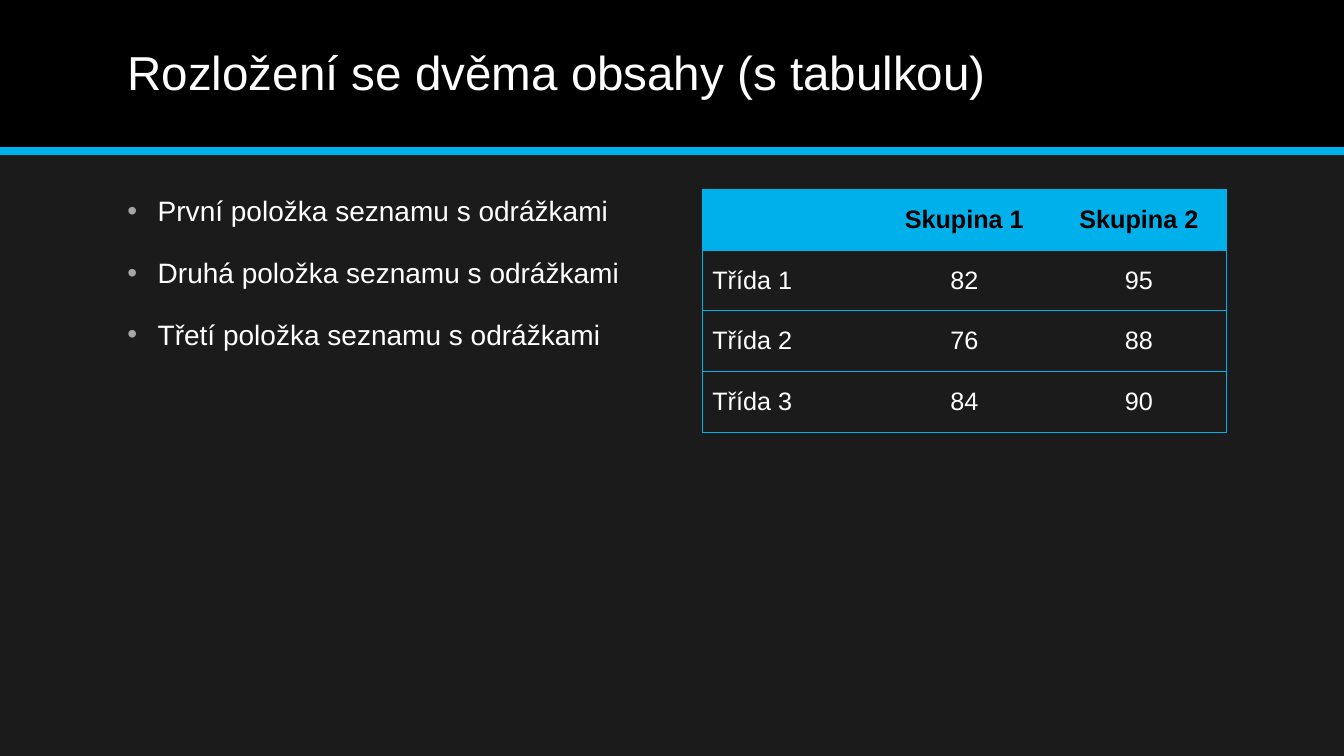
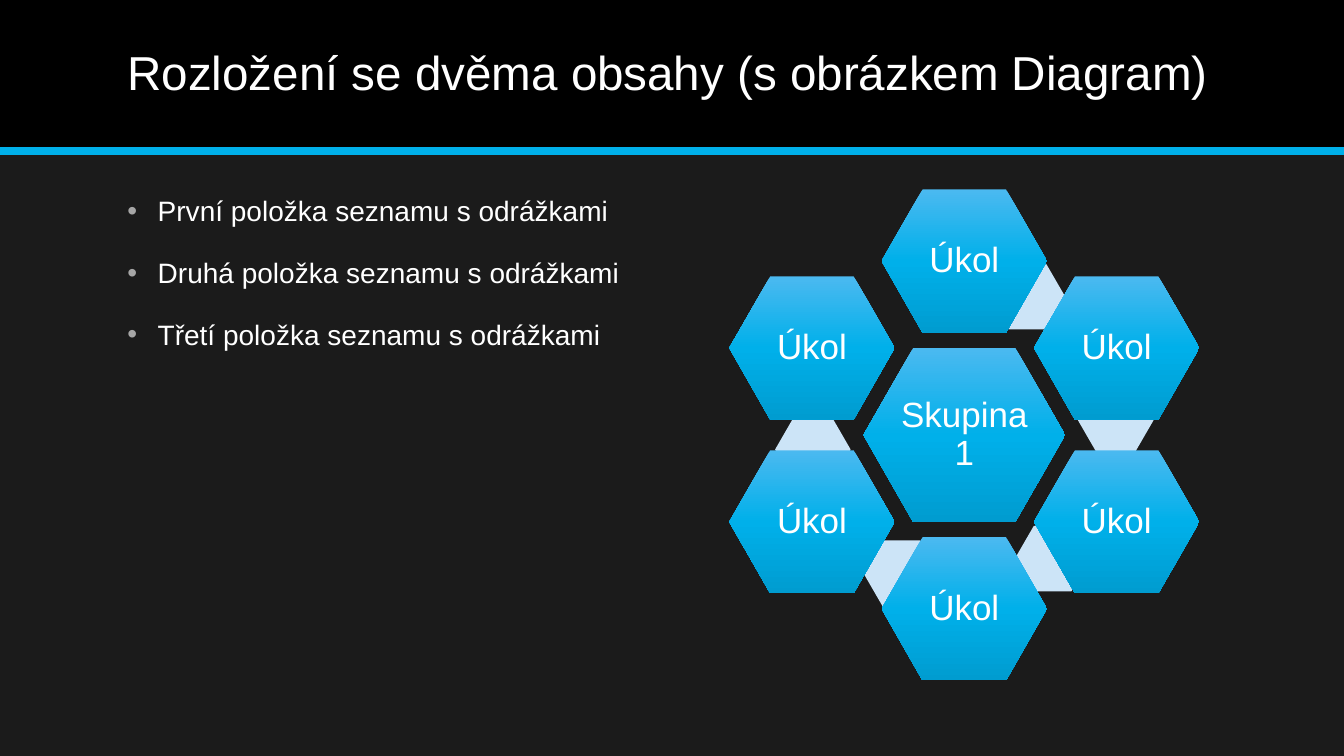
from copy import deepcopy
from dataclasses import dataclass
from math import cos, radians, sin

from lxml.etree import SubElement
from pptx import Presentation
from pptx.dml.color import RGBColor
from pptx.enum.shapes import MSO_CONNECTOR, MSO_SHAPE
from pptx.enum.text import MSO_ANCHOR, PP_ALIGN
from pptx.oxml.ns import qn
from pptx.util import Emu, Inches, Pt

WIDTH, HEIGHT = Inches(13.333), Inches(7.5)
FONT = "Arial"
BLACK, WHITE, DARK, GREY = "000000", "FFFFFF", "1B1B1B", "A6A6A6"
ACCENT, LINK_BLUE = "00B0EA", "CCE4F7"
TASK_GRADIENT = ((0, "4BB9F0"), (0.5, ACCENT), (1, "009CD0"))


@dataclass(frozen=True)
class Area:
    """A rectangle in percent of the slide's width and height."""

    left: float
    top: float
    width: float
    height: float

    def emu(self) -> tuple[Emu, Emu, Emu, Emu]:
        """Return left, top, width and height as lengths."""
        return across(self.left), down(self.top), across(self.width), down(self.height)


@dataclass(frozen=True)
class Ring:
    """Hexagons of one size set every 60 degrees around the hub."""

    width: float
    height: float
    radius_x: float = 0
    radius_y: float = 0
    start: float = 0
    adjust: float = 0.286

    def area(self, step: int) -> Area:
        """Return the place of one hexagon, clockwise from the start angle."""
        angle = radians(self.start + 60 * step)
        x = HUB_X + self.radius_x * sin(angle)
        y = HUB_Y - self.radius_y * cos(angle)
        return Area(x - self.width / 2, y - self.height / 2, self.width, self.height)


BAND = Area(0, 0, 100, 20)
TITLE = Area(8.75, 1.87, 82.5, 16)
LIST = Area(8.75, 25, 39, 65)
GRADES = Area(52.25, 25, 39, 32.2)
HUB_X, HUB_Y = 71.75, 57.53
HUB = Ring(15, 23.07)
TASKS = Ring(12.3, 18.93, 13.09, 23)
LINKS = Ring(5.62, 8.67, 11.32, 20.1, start=24.5, adjust=0.289)

ITEMS = (
    "První položka seznamu s odrážkami",
    "Druhá položka seznamu s odrážkami",
    "Třetí položka seznamu s odrážkami",
)
GRADE_ROWS = (
    ("", "Skupina 1", "Skupina 2"),
    ("Třída 1", "82", "95"),
    ("Třída 2", "76", "88"),
    ("Třída 3", "84", "90"),
)


def across(percent: float) -> Emu:
    """Turn a share of the slide's width into a length."""
    return Emu(round(WIDTH * percent / 100))


def down(percent: float) -> Emu:
    """Turn a share of the slide's height into a length."""
    return Emu(round(HEIGHT * percent / 100))


def colour(value: str) -> RGBColor:
    """Turn a hex string into a colour."""
    return RGBColor.from_string(value)


def add_bullet(paragraph) -> None:
    """Give a paragraph a grey bullet and a hanging indent."""
    properties = paragraph._p.get_or_add_pPr()
    properties.set("marL", str(Inches(0.3)))
    properties.set("indent", str(-Inches(0.3)))
    tint = SubElement(properties, qn("a:buClr"))
    SubElement(tint, qn("a:srgbClr")).set("val", GREY)
    SubElement(properties, qn("a:buFont")).set("typeface", FONT)
    SubElement(properties, qn("a:buChar")).set("char", "•")


def write(frame, *lines: str, size: float, ink: str = WHITE, bold: bool = False,
          align=PP_ALIGN.LEFT, anchor=MSO_ANCHOR.MIDDLE, spacing: float = 1,
          before: float = 0, bullets: bool = False) -> None:
    """Write lines as paragraphs with one format."""
    frame.word_wrap = True
    frame.vertical_anchor = anchor
    for index, line in enumerate(lines):
        paragraph = frame.add_paragraph() if index else frame.paragraphs[0]
        if bullets:
            add_bullet(paragraph)
        paragraph.alignment = align
        paragraph.line_spacing = spacing
        paragraph.space_before = Pt(before if index else 0)
        font = paragraph.font
        run = paragraph.add_run()
        run.text = line
        for font in (paragraph.font, run.font):
            font.name, font.size, font.bold = FONT, Pt(size), bold
            font.color.rgb = colour(ink)


def add_filled(slide, kind, area: Area, fill: str):
    """Add a plain shape with a solid fill and no line."""
    shape = slide.shapes.add_shape(kind, *area.emu())
    shape.shadow.inherit = False
    shape.fill.solid()
    shape.fill.fore_color.rgb = colour(fill)
    shape.line.fill.background()
    return shape


def add_hexagon(slide, ring: Ring, step: int, fill: str = ACCENT):
    """Add one hexagon of a ring."""
    hexagon = add_filled(slide, MSO_SHAPE.HEXAGON, ring.area(step), fill)
    hexagon.adjustments[0] = ring.adjust
    return hexagon


def shade(shape) -> None:
    """Fill a shape with the gradient of the tasks, from top to bottom."""
    shape.fill.gradient()
    shape.fill.gradient_angle = 270
    stops = shape.element.spPr.find(qn("a:gradFill")).find(qn("a:gsLst"))
    stops.append(deepcopy(stops[-1]))
    for stop, (position, tint) in zip(shape.fill.gradient_stops, TASK_GRADIENT):
        stop.position = position
        stop.color.rgb = colour(tint)


def add_task(slide, ring: Ring, step: int, label: str) -> None:
    """Add a shaded hexagon with its label."""
    hexagon = add_hexagon(slide, ring, step)
    shade(hexagon)
    frame = hexagon.text_frame
    frame.margin_left = frame.margin_right = 0
    frame.margin_top = frame.margin_bottom = Inches(0.03)
    write(frame, label, size=25, align=PP_ALIGN.CENTER, spacing=0.9)


def set_borders(cell, edges: str) -> None:
    """Draw the named edges of a cell and clear the others."""
    properties = cell._tc.get_or_add_tcPr()
    for index, edge in enumerate("LRTB"):
        border = properties.makeelement(qn(f"a:ln{edge}"), {"w": str(Pt(0.5))})
        properties.insert(index, border)
        if edge in edges:
            solid = SubElement(border, qn("a:solidFill"))
            SubElement(solid, qn("a:srgbClr")).set("val", ACCENT)
        else:
            SubElement(border, qn("a:noFill"))


def add_grades(slide) -> None:
    """Add the table of classes and groups."""
    count = len(GRADE_ROWS[0])
    table = slide.shapes.add_table(len(GRADE_ROWS), count, *GRADES.emu()).table
    table.horz_banding = False
    for column in table.columns:
        column.width = across(GRADES.width / count)
    for row, values in enumerate(GRADE_ROWS):
        table.rows[row].height = down(GRADES.height / len(GRADE_ROWS))
        for column, value in enumerate(values):
            cell = table.cell(row, column)
            header = row == 0
            if header:
                cell.fill.solid()
                cell.fill.fore_color.rgb = colour(ACCENT)
            else:
                cell.fill.background()
            set_borders(cell, "TB" + "L" * (column == 0) + "R" * (column == count - 1))
            cell.vertical_anchor = MSO_ANCHOR.MIDDLE
            if value:
                write(cell.text_frame, value, size=18, bold=header,
                      ink=BLACK if header else WHITE,
                      align=PP_ALIGN.CENTER if column else PP_ALIGN.LEFT)


def add_cycle(slide) -> None:
    """Add the hub, the links and the ring of tasks."""
    add_task(slide, HUB, 0, "Skupina 1")
    for step in range(5):
        add_hexagon(slide, LINKS, step, LINK_BLUE)
    for step in range(6):
        add_task(slide, TASKS, step, "Úkol")


def add_content_slide(deck, title: str):
    """Add a slide with the band, the title and the bulleted list."""
    slide = deck.slides.add_slide(deck.slide_layouts[6])
    slide.background.fill.solid()
    slide.background.fill.fore_color.rgb = colour(DARK)
    add_filled(slide, MSO_SHAPE.RECTANGLE, BAND, BLACK)
    edge = down(BAND.height)
    rule = slide.shapes.add_connector(MSO_CONNECTOR.STRAIGHT, 0, edge, WIDTH, edge)
    rule.line.color.rgb = colour(ACCENT)
    rule.line.width = Pt(6)
    SubElement(rule.element.spPr, qn("a:effectLst"))
    heading = slide.shapes.add_textbox(*TITLE.emu())
    write(heading.text_frame, title, size=34, spacing=0.9)
    points = slide.shapes.add_textbox(*LIST.emu())
    write(points.text_frame, *ITEMS, size=20, anchor=MSO_ANCHOR.TOP,
          before=20, bullets=True)
    return slide


def main() -> None:
    """Build and save the deck."""
    deck = Presentation()
    deck.slide_width, deck.slide_height = WIDTH, HEIGHT
    add_grades(add_content_slide(deck, "Rozložení se dvěma obsahy (s tabulkou)"))
    add_cycle(add_content_slide(deck, "Rozložení se dvěma obsahy (s obrázkem Diagram)"))
    deck.save("out.pptx")


if __name__ == "__main__":
    main()
